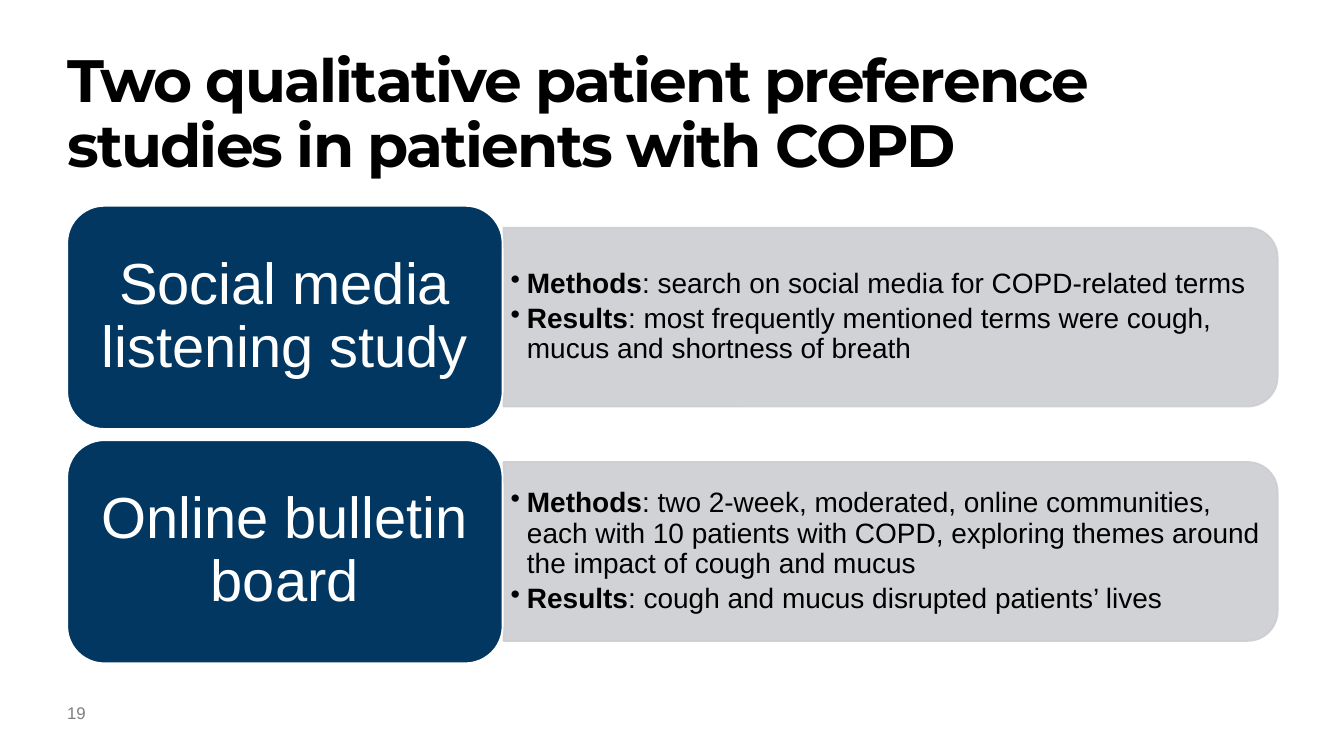
import dataclasses

import lxml.etree
import pptx
import pptx.dml.color
import pptx.enum.shapes
import pptx.enum.text
import pptx.oxml.ns
import pptx.slide
import pptx.util

Cm = pptx.util.Cm
Pt = pptx.util.Pt
Kind = pptx.enum.shapes.MSO_SHAPE
Align = pptx.enum.text.PP_ALIGN
Anchor = pptx.enum.text.MSO_ANCHOR
qn = pptx.oxml.ns.qn


def color(code):
    return pptx.dml.color.RGBColor.from_string(code)


@dataclasses.dataclass
class Deck:
    slide: pptx.slide.Slide
    face: str = "Arial"
    head: str = "Montserrat"
    ink: str = "000000"
    white: str = "FFFFFF"
    navy: str = "023761"
    gray: str = "CCCED2"
    dim: str = "7F7F7F"

    def frame(self, left, top, width, height, side=0, edge=0, anchor=Anchor.TOP):
        box = self.slide.shapes.add_textbox(Cm(left), Cm(top), Cm(width), Cm(height))
        frame = box.text_frame
        frame.word_wrap = True
        frame.margin_left = frame.margin_right = Cm(side)
        frame.margin_top = frame.margin_bottom = Cm(edge)
        frame.vertical_anchor = anchor
        return frame

    def run(self, para, text, size, code, bold=False, face=None):
        run = para.add_run()
        run.text = text
        font = run.font
        font.name = face or self.face
        font.size = Pt(size)
        font.bold = bold
        font.color.rgb = color(code)
        return run

    def title(self, text):
        para = self.frame(1.27, 0.97, 22.86, 2.67).paragraphs[0]
        para.line_spacing = 0.9
        run = self.run(para, text, 32, self.ink, True, self.head)
        run.font._element.set("spc", "-100")

    def number(self, text):
        para = self.frame(1.27, 13.28, 0.64, 0.64).paragraphs[0]
        self.run(para, text, 9, self.dim)

    def shape(self, kind, left, top, width, height, fill, line):
        shape = self.slide.shapes.add_shape(
            kind, Cm(left), Cm(top), Cm(width), Cm(height))
        shape.shadow.inherit = False
        shape.fill.solid()
        shape.fill.fore_color.rgb = color(fill)
        shape.line.color.rgb = color(line)
        shape.line.width = Pt(1)
        return shape

    def panel(self, top, items):
        shape = self.shape(Kind.ROUND_2_SAME_RECTANGLE, 15.14, top - 5.21,
                           3.38, 14.63, self.gray, self.gray)
        shape.rotation = 90
        for node in shape._element.spPr.iter(qn("a:srgbClr")):
            lxml.etree.SubElement(node, qn("a:alpha"), val="90000")
        frame = self.frame(9.5, top + 0.58, 14.48, 3.05, 0.15, 0.08, Anchor.MIDDLE)
        for index, (label, text) in enumerate(items):
            para = frame.add_paragraph() if index else frame.paragraphs[0]
            para.level = 1
            para.line_spacing = 0.9
            para.space_after = Pt(2.5)
            props = para._p.get_or_add_pPr()
            props.set("marL", str(Cm(0.31)))
            props.set("indent", str(-Cm(0.31)))
            lxml.etree.SubElement(props, qn("a:buChar"), char="•")
            self.run(para, label, 15, self.ink, True)
            self.run(para, text, 15, self.ink)

    def card(self, top, text):
        self.shape(Kind.ROUNDED_RECTANGLE, 1.27, top, 8.23, 4.22,
                   self.navy, self.white)
        frame = self.frame(1.47, top + 0.2, 7.82, 3.81, 0.33, 0.16, Anchor.MIDDLE)
        para = frame.paragraphs[0]
        para.alignment = Align.CENTER
        para.line_spacing = 0.9
        self.run(para, text, 31, self.white)


show = pptx.Presentation()
show.slide_width = Cm(25.4)
show.slide_height = Cm(14.29)
deck = Deck(show.slides.add_slide(show.slide_layouts[6]))

studies = [
    ("Social media listening study", [
        ("Methods", ": search on social media for COPD-related terms"),
        ("Results", ": most frequently mentioned terms were cough, "
                    "mucus and shortness of breath"),
    ]),
    ("Online bulletin board", [
        ("Methods", ": two 2-week, moderated, online communities, each with "
                    "10 patients with COPD, exploring themes around the "
                    "impact of cough and mucus"),
        ("Results", ": cough and mucus disrupted patients’ lives"),
    ]),
]

deck.title("Two qualitative patient preference studies in patients with COPD")
deck.number("19")
for row, (name, items) in enumerate(studies):
    top = 3.89 + row * 4.43
    deck.panel(top, items)
    deck.card(top, name)

show.save("out.pptx")
